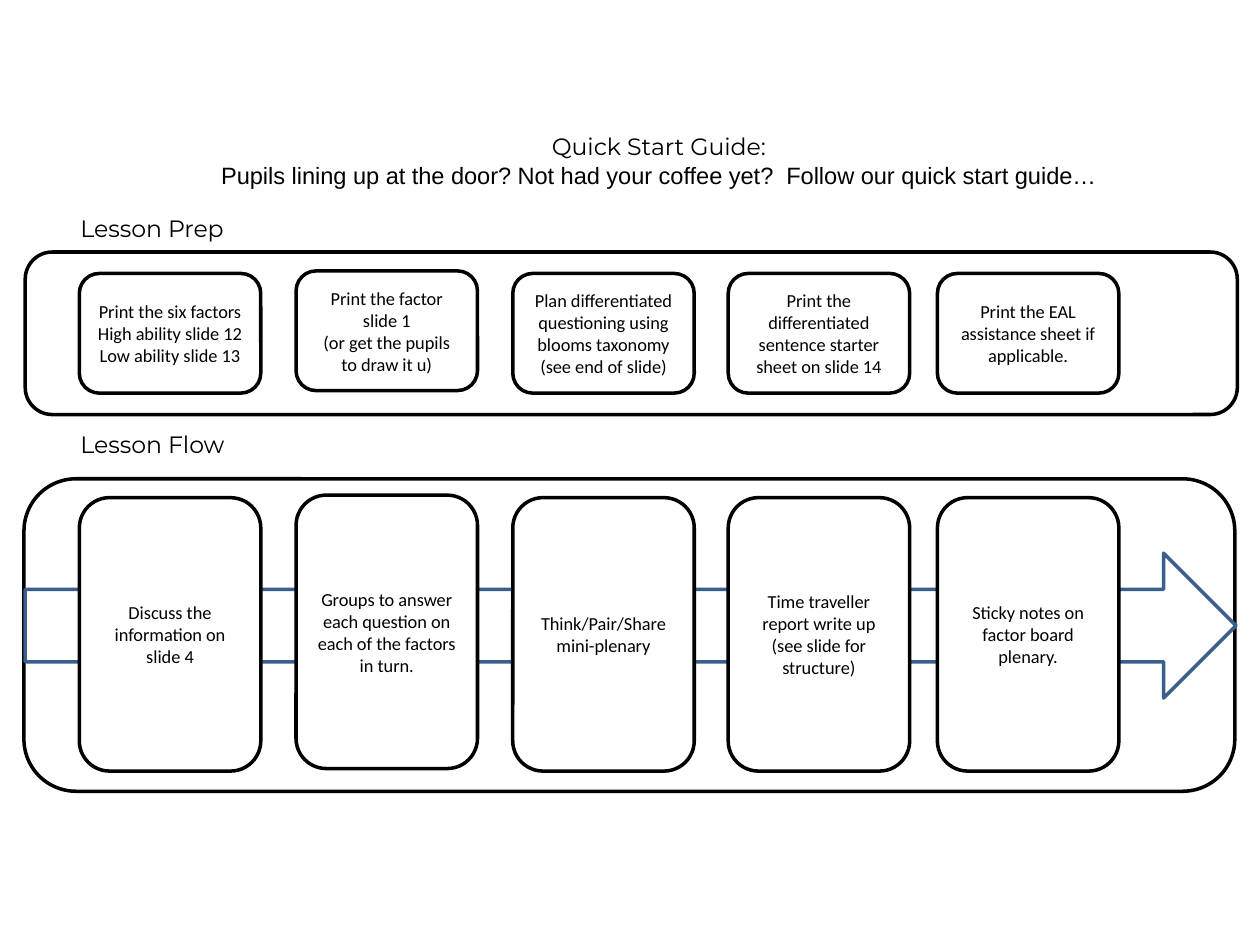
from pptx import Presentation
from pptx.dml.color import RGBColor
from pptx.enum.shapes import MSO_SHAPE as Kind
from pptx.enum.text import MSO_ANCHOR as Anchor, MSO_AUTO_SIZE as Fit, PP_ALIGN as Align
from pptx.util import Inches, Pt

COLORS = {"white": "FFFFFF", "black": "000000", "blue": "3A5F8C"}


def add_shape(kind, left, top, width, height, line="black"):
    """Add a white shape with a 2 pt outline."""
    shape = slide.shapes.add_shape(kind, Inches(left), Inches(top), Inches(width), Inches(height))
    shape.shadow.inherit = False
    shape.fill.solid()
    shape.fill.fore_color.rgb = RGBColor.from_string(COLORS["white"])
    shape.line.color.rgb = RGBColor.from_string(COLORS[line])
    shape.line.width = Pt(2)
    return shape


def write(frame, lines, fonts, size, align):
    """Fill a text frame, one paragraph for each line and its font."""
    frame.word_wrap = True
    frame.text = "\n".join(lines)
    for para, name in zip(frame.paragraphs, fonts):
        para.alignment = align
        para.font.name = name
        para.font.size = Pt(size)
        para.font.color.rgb = RGBColor.from_string(COLORS["black"])


prs = Presentation()
prs.slide_width, prs.slide_height = Inches(10), Inches(7.5)
slide = prs.slides.add_slide(prs.slide_layouts[5])

title = slide.shapes.title
title.left, title.top, title.width, title.height = map(Inches, (0.46, 1, 9.54, 0.56))
title.text_frame.auto_size = Fit.NONE
title.text_frame.vertical_anchor = Anchor.TOP
write(title.text_frame, [
    "Quick Start Guide:",
    "Pupils lining up at the door? Not had your coffee yet?  Follow our quick start guide…",
], ["Montserrat", "Arial"], 13.5, Align.CENTER)

# Frames behind the two rows of steps
add_shape(Kind.ROUNDED_RECTANGLE, 0.19, 3.8, 9.61, 2.48)
add_shape(Kind.RIGHT_ARROW, 0.2, 4.39, 9.61, 1.15, "blue")
add_shape(Kind.ROUNDED_RECTANGLE, 0.2, 2, 9.62, 1.29)

for label, top in (("Lesson Flow", 3.36), ("Lesson Prep", 1.65)):
    box = slide.shapes.add_textbox(Inches(0.54), Inches(top), Inches(1.68), Inches(0.33))
    write(box.text_frame, [label], ["Montserrat"], 13.5, Align.LEFT)

flow = [
    ["Discuss the information on slide 4"],
    ["Groups to answer each question on each of the factors in turn."],
    ["Think/Pair/Share mini-plenary"],
    ["Time traveller report write up (see slide for structure)"],
    ["Sticky notes on factor board plenary."],
]
prep = [
    ["Print the six factors", "High ability slide 12", "Low ability slide 13"],
    ["Print the factor slide 1", "(or get the pupils to draw it u)"],
    ["Plan differentiated questioning using blooms taxonomy (see end of slide)"],
    ["Print the differentiated sentence starter sheet on slide 14"],
    ["Print the EAL assistance sheet if applicable."],
]
lefts = [0.63, 2.35, 4.07, 5.78, 7.44]
lifts = [0, 0.02, 0, 0, 0]  # the second step sits slightly higher

for steps, top, height in ((flow, 3.95, 2.17), (prep, 2.17, 0.95)):
    for lines, left, lift in zip(steps, lefts, lifts):
        card = add_shape(Kind.ROUNDED_RECTANGLE, left, top - lift, 1.44, height)
        card.text_frame.vertical_anchor = Anchor.MIDDLE
        write(card.text_frame, lines, ["Calibri"] * len(lines), 10.5, Align.CENTER)

prs.save("out.pptx")
